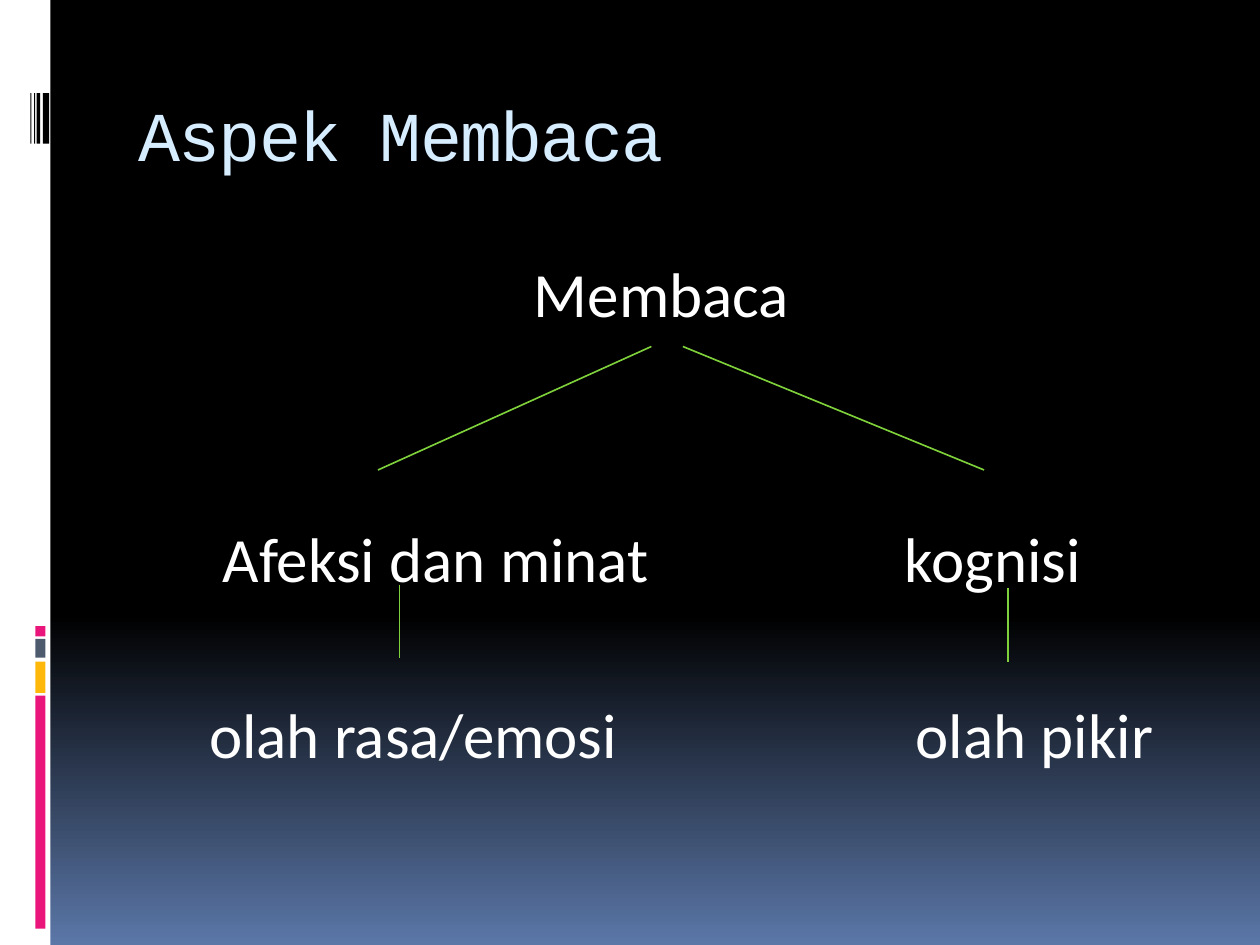
from lxml import etree
from pptx import Presentation
from pptx.dml.color import RGBColor
from pptx.enum.shapes import MSO_CONNECTOR, MSO_SHAPE
from pptx.enum.text import MSO_ANCHOR, PP_ALIGN
from pptx.oxml.ns import qn
from pptx.util import Inches, Pt

RECTANGLE = MSO_SHAPE.RECTANGLE
STRAIGHT = MSO_CONNECTOR.STRAIGHT
LEFT, CENTER = PP_ALIGN.LEFT, PP_ALIGN.CENTER
TOP, MIDDLE = MSO_ANCHOR.TOP, MSO_ANCHOR.MIDDLE

BLACK = RGBColor(0x00, 0x00, 0x00)
WHITE = RGBColor(0xFF, 0xFF, 0xFF)
BLUE = RGBColor(0x5B, 0x77, 0xA8)
PALE_BLUE = RGBColor(0xD6, 0xEC, 0xFF)
PINK = RGBColor(0xEA, 0x15, 0x7A)
AMBER = RGBColor(0xFE, 0xB8, 0x0A)
SLATE = RGBColor(0x4E, 0x5B, 0x6F)
GREEN = RGBColor(0x7F, 0xD1, 0x3B)

SLIDE_WIDTH, SLIDE_HEIGHT = 10, 7.5
ROW_TOP, ROW_HEIGHT = 2.02, 0.7
LABEL_WIDTH = 4

ACCENT_BARS = [(4.97, 0.08, PINK), (5.07, 0.15, SLATE),
               (5.25, 0.25, AMBER), (5.52, 1.85, PINK)]
BARCODE_STRIPES = [(0.24, 0.01), (0.27, 0.01), (0.29, 0.03), (0.34, 0.05)]
LABELS = [("Membaca", 5.25, 0), ("Afeksi dan minat", 3.46, 3), ("kognisi", 7.88, 3),
          ("olah rasa/emosi", 3.28, 5), ("olah pikir", 8.21, 5)]
BRANCHES = [(5.17, 2.75, 3, 3.73), (5.42, 2.75, 7.81, 3.73),
            (3.17, 4.64, 3.17, 5.22), (8, 4.67, 8, 5.25)]


def paint_background(slide):
    """Fill the slide with black fading to blue at the bottom."""
    fill = slide.background.fill
    fill.gradient()
    fill.gradient_angle = 270
    for stop, position, color in zip(fill.gradient_stops, (0.65, 1), (BLACK, BLUE)):
        stop.position = position
        stop.color.rgb = color


def add_bar(slide, left, top, width, height, color):
    """Add a plain filled rectangle."""
    shape = slide.shapes.add_shape(
        RECTANGLE, Inches(left), Inches(top), Inches(width), Inches(height))
    shape.shadow.inherit = False
    shape.fill.solid()
    shape.fill.fore_color.rgb = color
    shape.line.fill.background()


def add_text(slide, text, left, top, width, height, font_name, size, color,
             alignment=CENTER, anchor=TOP):
    """Add one line of text without insets and return its run."""
    shape = slide.shapes.add_textbox(
        Inches(left), Inches(top), Inches(width), Inches(height))
    frame = shape.text_frame
    frame.word_wrap = True
    frame.vertical_anchor = anchor
    frame.margin_left = frame.margin_right = 0
    frame.margin_top = frame.margin_bottom = 0
    frame.text = text
    paragraph = frame.paragraphs[0]
    paragraph.alignment = alignment
    run = paragraph.runs[0]
    run.font.name = font_name
    run.font.size = Pt(size)
    run.font.color.rgb = color
    return run


def add_title(slide, text):
    """Add the title with tightened letter spacing."""
    run = add_text(slide, text, 1.1, 0.56, 8.3, 1, "Courier New", 40, PALE_BLUE,
                   LEFT, MIDDLE)
    run.font._element.set("spc", "-100")


def add_label(slide, text, center, row):
    """Add a tree label centred on a point of a text row."""
    add_text(slide, text, center - LABEL_WIDTH / 2, ROW_TOP + row * ROW_HEIGHT,
             LABEL_WIDTH, ROW_HEIGHT, "Calibri", 36, WHITE)


def add_branch(slide, *ends):
    """Add a thin green line between two points."""
    connector = slide.shapes.add_connector(STRAIGHT, *map(Inches, ends))
    connector.line.color.rgb = GREEN
    connector.line.width = Pt(0.94)
    etree.SubElement(connector._element.spPr, qn("a:effectLst"))


def main():
    """Build and save the slide."""
    presentation = Presentation()
    presentation.slide_width = Inches(SLIDE_WIDTH)
    presentation.slide_height = Inches(SLIDE_HEIGHT)
    slide = presentation.slides.add_slide(presentation.slide_layouts[6])
    paint_background(slide)
    add_bar(slide, 0, 0, 0.4, SLIDE_HEIGHT, WHITE)
    for top, height, color in ACCENT_BARS:
        add_bar(slide, 0.28, top, 0.08, height, color)
    for left, width in BARCODE_STRIPES:
        add_bar(slide, left, 0.74, width, 0.4, BLACK)
    add_title(slide, "Aspek Membaca")
    for label in LABELS:
        add_label(slide, *label)
    for branch in BRANCHES:
        add_branch(slide, *branch)
    presentation.save("out.pptx")


if __name__ == "__main__":
    main()
